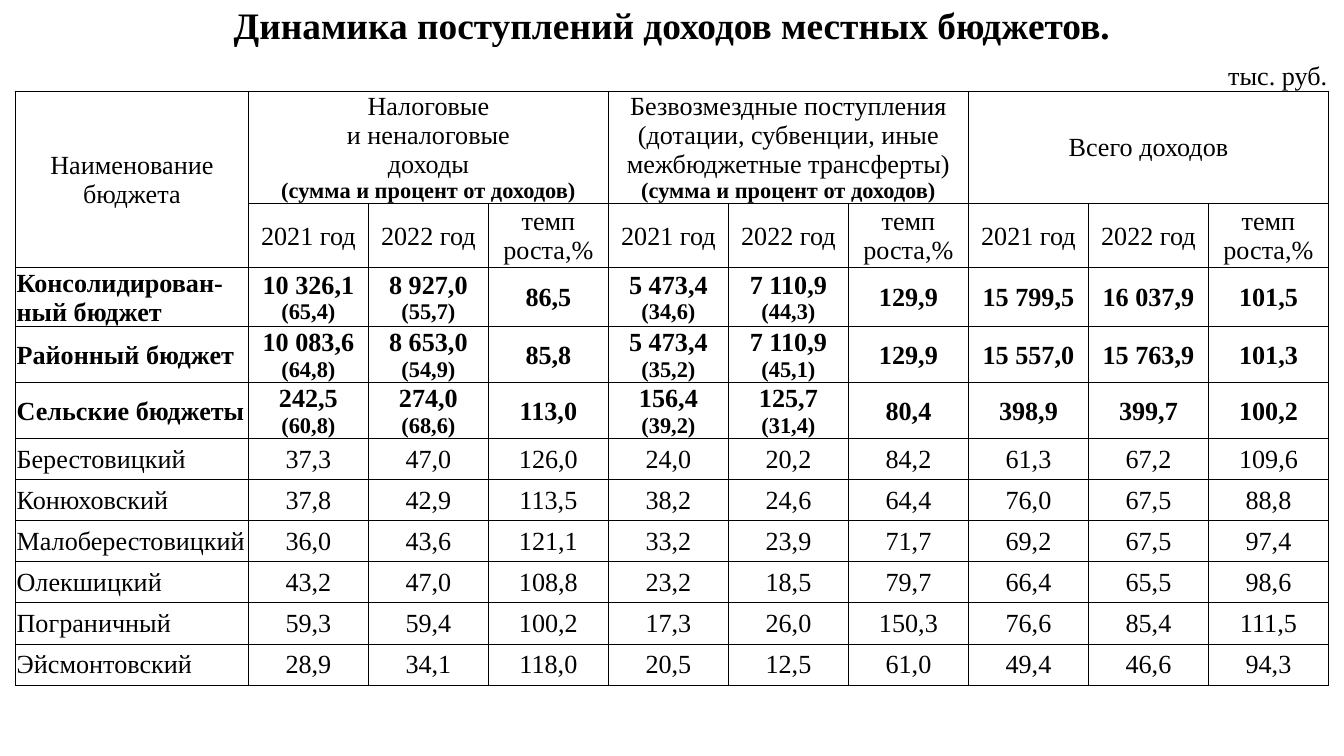
from pptx import Presentation
from pptx.dml.color import RGBColor
from pptx.enum.text import MSO_ANCHOR, PP_ALIGN
from pptx.oxml.ns import qn
from pptx.util import Pt
from lxml import etree

LEFT, CENTER, RIGHT = PP_ALIGN.LEFT, PP_ALIGN.CENTER, PP_ALIGN.RIGHT
MIDDLE, BOTTOM = MSO_ANCHOR.MIDDLE, MSO_ANCHOR.BOTTOM
BLACK = RGBColor(0x00, 0x00, 0x00)
FONT = "Times New Roman"
BODY, SMALL, TITLE = 14, 12, 20
INSET = 0.6

NAME_WIDTH, VALUE_WIDTH = 124.8, 64.3
ROW_HEIGHTS = [23.3, 23.3, 60, 34.3, 31.6, 30, 30] + [22] * 6
ALL_SIDES = "LRTB"

SHARE_NOTE = "(сумма и процент от доходов)"
GROUPS = [
    (["Налоговые", "и неналоговые", "доходы"], True),
    (["Безвозмездные поступления (дотации, субвенции, иные межбюджетные трансферты)"], True),
    (["Всего доходов"], False),
]
SUBHEADS = [["2021 год"], ["2022 год"], ["темп", "роста,%"]]

# Name, then amounts; "|" separates an amount from its share of income.
TOTALS = [
    ("Консолидирован-ный бюджет", "10 326,1|(65,4)", "8 927,0|(55,7)", "86,5",
     "5 473,4|(34,6)", "7 110,9|(44,3)", "129,9", "15 799,5", "16 037,9", "101,5"),
    ("Районный бюджет", "10 083,6|(64,8)", "8 653,0|(54,9)", "85,8",
     "5 473,4|(35,2)", "7 110,9|(45,1)", "129,9", "15 557,0", "15 763,9", "101,3"),
    ("Сельские бюджеты", "242,5|(60,8)", "274,0|(68,6)", "113,0",
     "156,4|(39,2)", "125,7|(31,4)", "80,4", "398,9", "399,7", "100,2"),
]
VILLAGES = [
    ("Берестовицкий", "37,3", "47,0", "126,0", "24,0", "20,2", "84,2", "61,3", "67,2", "109,6"),
    ("Конюховский", "37,8", "42,9", "113,5", "38,2", "24,6", "64,4", "76,0", "67,5", "88,8"),
    ("Малоберестовицкий", "36,0", "43,6", "121,1", "33,2", "23,9", "71,7", "69,2", "67,5", "97,4"),
    ("Олекшицкий", "43,2", "47,0", "108,8", "23,2", "18,5", "79,7", "66,4", "65,5", "98,6"),
    ("Пограничный", "59,3", "59,4", "100,2", "17,3", "26,0", "150,3", "76,6", "85,4", "111,5"),
    ("Эйсмонтовский", "28,9", "34,1", "118,0", "20,5", "12,5", "61,0", "49,4", "46,6", "94,3"),
]


def set_borders(cell, visible):
    """Draw the sides named in visible (letters of LRTB) and hide the others."""
    tcPr = cell._tc.get_or_add_tcPr()
    for side in ALL_SIDES:
        ln = etree.SubElement(tcPr, qn(f"a:ln{side}"), w=str(Pt(0.5)))
        if side in visible:
            fill = etree.SubElement(ln, qn("a:solidFill"))
            etree.SubElement(fill, qn("a:srgbClr"), val=str(BLACK))
        else:
            etree.SubElement(ln, qn("a:noFill"))


def format_cell(cell, borders):
    cell.margin_left = cell.margin_right = cell.margin_top = Pt(INSET)
    cell.margin_bottom = 0
    set_borders(cell, borders)
    cell.fill.background()


def write(cell, lines, align=CENTER, anchor=MIDDLE):
    """Fill the cell with one paragraph per (text, size, bold) line."""
    cell.vertical_anchor = anchor
    tf = cell.text_frame
    for i, (text, size, bold) in enumerate(lines):
        p = tf.paragraphs[0] if i == 0 else tf.add_paragraph()
        p.alignment = align
        r = p.add_run()
        r.text = text
        r.font.name = FONT
        r.font.size = Pt(size)
        r.font.bold = bold
        r.font.color.rgb = BLACK


def add_grid(s):
    width = NAME_WIDTH + 9 * VALUE_WIDTH
    frame = s.shapes.add_table(len(ROW_HEIGHTS), 10, Pt(8.3), Pt(2.2),
                               Pt(width), Pt(sum(ROW_HEIGHTS)))
    table = frame.table
    table.first_row = table.horz_banding = False
    for i, column in enumerate(table.columns):
        column.width = Pt(VALUE_WIDTH if i else NAME_WIDTH)
    for i, row in enumerate(table.rows):
        row.height = Pt(ROW_HEIGHTS[i])
        borders = ("", "B")[i] if i < 2 else ALL_SIDES
        for cell in row.cells:
            format_cell(cell, borders)
    return table


def fill_headings(table):
    table.cell(0, 0).merge(table.cell(0, 9))
    write(table.cell(0, 0), [("Динамика поступлений доходов местных бюджетов.", TITLE, True)],
          anchor=BOTTOM)
    for col in (1, 3, 5):
        table.cell(1, col).merge(table.cell(1, col + 1))
    write(table.cell(1, 9), [("тыс. руб.", BODY, False)], RIGHT, BOTTOM)

    table.cell(2, 0).merge(table.cell(3, 0))
    write(table.cell(2, 0), [("Наименование бюджета", BODY, False)])
    for group, (heading, has_share) in enumerate(GROUPS):
        col = 1 + 3 * group
        table.cell(2, col).merge(table.cell(2, col + 2))
        lines = [(text, BODY, False) for text in heading]
        if has_share:
            lines.append((SHARE_NOTE, SMALL, True))
        write(table.cell(2, col), lines)
        for i, subhead in enumerate(SUBHEADS):
            write(table.cell(3, col + i), [(text, BODY, False) for text in subhead])


def fill_budgets(table, first_row, budgets, bold):
    for row, budget in enumerate(budgets, first_row):
        for col, entry in enumerate(budget):
            lines = [(text, SMALL if i else BODY, bold)
                     for i, text in enumerate(entry.split("|"))]
            write(table.cell(row, col), lines, CENTER if col else LEFT)


def main():
    prs = Presentation()
    prs.slide_width, prs.slide_height = Pt(720), Pt(405)
    s = prs.slides.add_slide(prs.slide_layouts[6])
    table = add_grid(s)
    fill_headings(table)
    fill_budgets(table, 4, TOTALS, True)
    fill_budgets(table, 4 + len(TOTALS), VILLAGES, False)
    prs.save("out.pptx")


if __name__ == "__main__":
    main()
